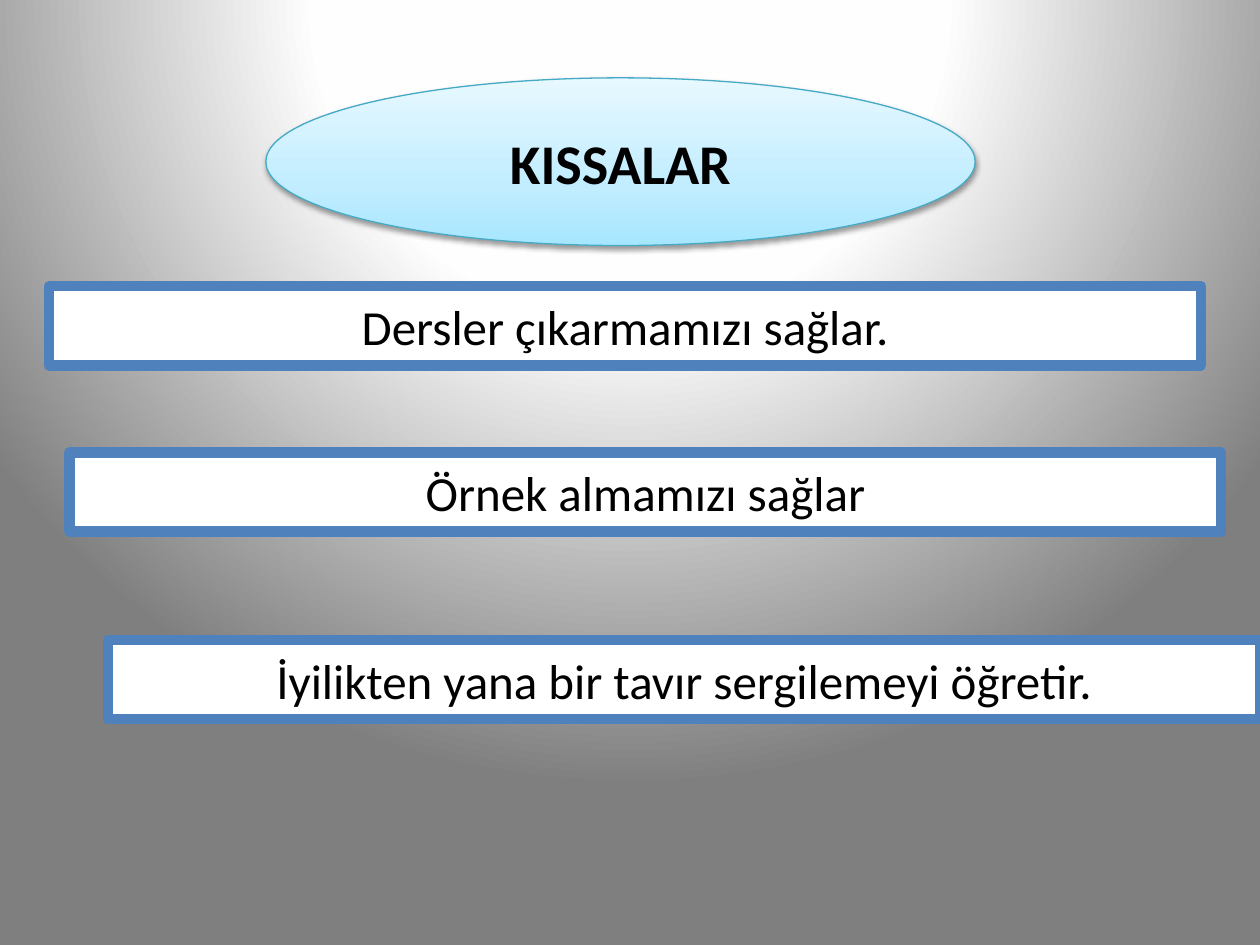
from dataclasses import dataclass

from lxml import etree
from pptx import Presentation
from pptx.dml.color import RGBColor
from pptx.enum.shapes import MSO_SHAPE
from pptx.enum.text import MSO_ANCHOR, PP_ALIGN
from pptx.oxml import parse_xml
from pptx.util import Cm, Pt

ELLIPSE = MSO_SHAPE.OVAL
RECTANGLE = MSO_SHAPE.RECTANGLE
MIDDLE = MSO_ANCHOR.MIDDLE
CENTER = PP_ALIGN.CENTER

NAMESPACE = "http://schemas.openxmlformats.org/drawingml/2006/main"
FONT = "Calibri"
BLANK_LAYOUT = 6

BACKGROUND_STOPS = [(0, "FFFFFF"), (40, "FEFEFE"), (100, "7F7F7F")]
BACKGROUND_PATH = (
    '<a:path path="circle">'
    '<a:fillToRect l="50000" t="-80000" r="50000" b="180000"/></a:path>'
)
TITLE_STOPS = [(0, "A7E6FF"), (35, "C1EDFF"), (100, "E7F8FF")]
UPWARD = '<a:lin ang="16200000" scaled="1"/>'

BOX_WIDTH, BOX_HEIGHT = 23.22, 1.6


@dataclass
class Lesson:
    text: str
    left: float
    top: float


LESSONS = [
    Lesson("Dersler çıkarmamızı sağlar.", 0.99, 5.77),
    Lesson("Örnek almamızı sağlar", 1.4, 9.12),
    Lesson("İyilikten yana bir tavır sergilemeyi öğretir.", 2.18, 12.9),
]


def color(value: str) -> RGBColor:
    return RGBColor.from_string(value)


def set_gradient(fill, parent, stops: list[tuple[int, str]], direction: str) -> None:
    """Give a fill the stops and direction; parent is the element that holds it."""
    fill.gradient()
    stop_xml = "".join(
        f'<a:gs pos="{position * 1000}"><a:srgbClr val="{value}"/></a:gs>'
        for position, value in stops
    )
    gradient = parse_xml(
        f'<a:gradFill xmlns:a="{NAMESPACE}" rotWithShape="1">'
        f"<a:gsLst>{stop_xml}</a:gsLst>{direction}</a:gradFill>"
    )
    current = next(parent.iter(f"{{{NAMESPACE}}}gradFill"))
    current.getparent().replace(current, gradient)


def add_soft_shadow(shape) -> None:
    effects = shape._element.spPr.find(f"{{{NAMESPACE}}}effectLst")
    shadow = etree.SubElement(
        effects, f"{{{NAMESPACE}}}outerShdw",
        blurRad="40000", dist="20000", dir="5400000", rotWithShape="0",
    )
    shade = etree.SubElement(shadow, f"{{{NAMESPACE}}}srgbClr", val="000000")
    etree.SubElement(shade, f"{{{NAMESPACE}}}alpha", val="38000")


def write_text(shape, text: str, *, size: float, bold: bool = False) -> None:
    frame = shape.text_frame
    frame.word_wrap = True
    frame.vertical_anchor = MIDDLE
    paragraph = frame.paragraphs[0]
    paragraph.alignment = CENTER
    run = paragraph.add_run()
    run.text = text
    run.font.name = FONT
    run.font.size = Pt(size)
    run.font.bold = bold
    run.font.color.rgb = color("000000")


def add_outlined_shape(slide, kind, left: float, top: float, width: float,
                       height: float, *, line: str, line_width: float):
    shape = slide.shapes.add_shape(kind, Cm(left), Cm(top), Cm(width), Cm(height))
    shape.shadow.inherit = False
    shape.line.color.rgb = color(line)
    shape.line.width = Pt(line_width)
    return shape


def add_title(slide, text: str) -> None:
    shape = add_outlined_shape(slide, ELLIPSE, 5.36, 1.57, 14.3, 3.38,
                               line="46AAC5", line_width=0.75)
    set_gradient(shape.fill, shape._element.spPr, TITLE_STOPS, UPWARD)
    add_soft_shadow(shape)
    write_text(shape, text, size=32, bold=True)


def add_lesson(slide, lesson: Lesson) -> None:
    shape = add_outlined_shape(slide, RECTANGLE, lesson.left, lesson.top,
                               BOX_WIDTH, BOX_HEIGHT, line="4F81BD", line_width=6)
    shape.fill.solid()
    shape.fill.fore_color.rgb = color("FFFFFF")
    write_text(shape, lesson.text, size=28)


def main() -> None:
    presentation = Presentation()
    presentation.slide_width = Cm(25.4)
    presentation.slide_height = Cm(19.05)
    slide = presentation.slides.add_slide(presentation.slide_layouts[BLANK_LAYOUT])

    # Background
    set_gradient(slide.background.fill, slide.element, BACKGROUND_STOPS, BACKGROUND_PATH)

    # Title and the lessons below it
    add_title(slide, "KISSALAR")
    for lesson in LESSONS:
        add_lesson(slide, lesson)

    presentation.save("out.pptx")


if __name__ == "__main__":
    main()
